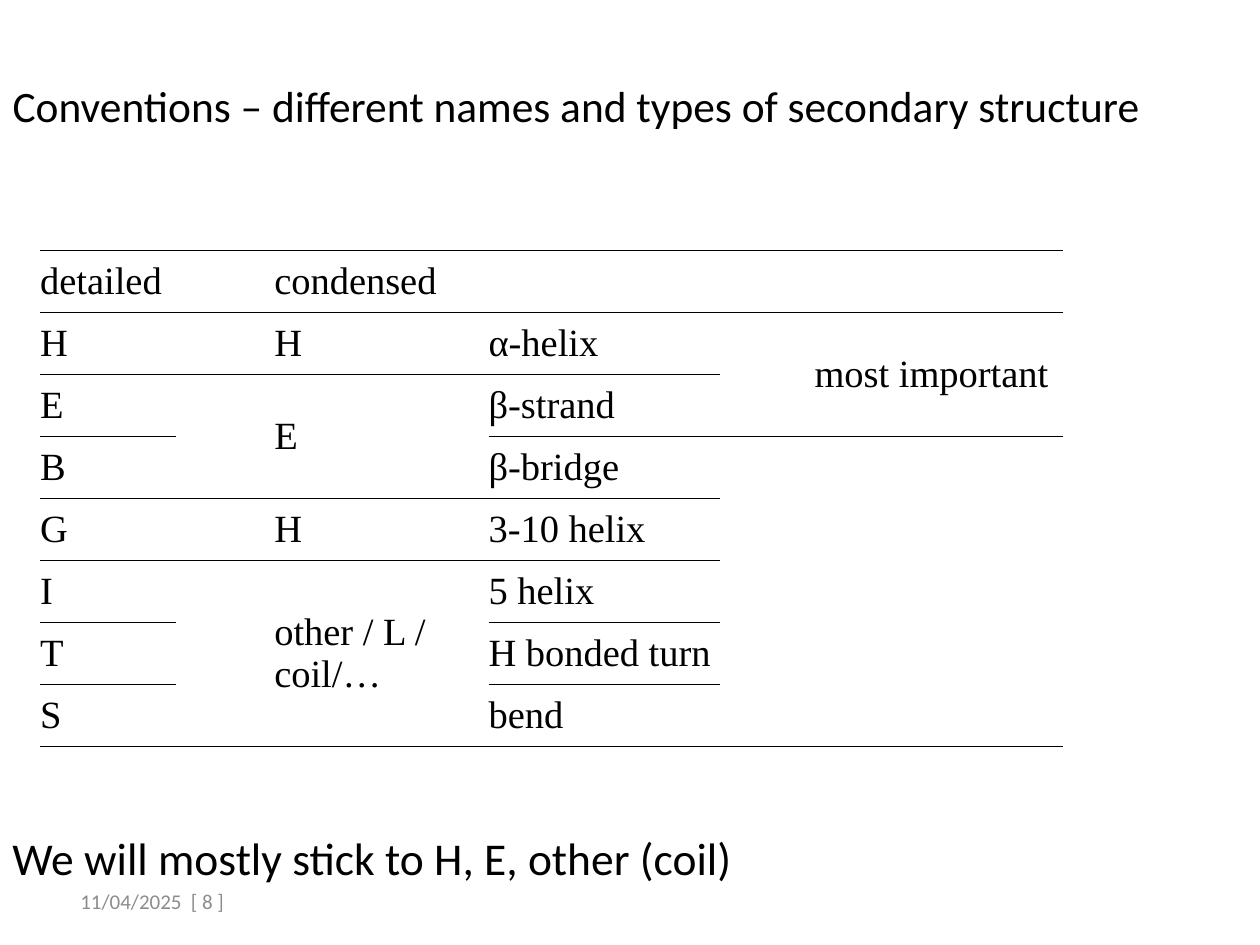
import dataclasses

import pptx
import pptx.dml.color
import pptx.enum.text
import pptx.oxml
import pptx.oxml.ns
import pptx.util
from pptx.util import Cm, Pt

MSO_ANCHOR = pptx.enum.text.MSO_ANCHOR


@dataclasses.dataclass(frozen=True)
class Theme:
    ink: str = "000000"
    muted: str = "8C8C8C"
    sans: str = "Calibri"
    serif: str = "Times New Roman"
    title: float = 24.8
    note: float = 26
    cell: float = 22
    footer: float = 12
    rule: float = 1


THEME = Theme()
NO_STYLE = "{2D5ABB26-0587-4C30-8999-92F81FD0307C}"

# Table content
COL_WIDTHS = [2.74, 1.98, 4.32, 4.67, 1.9, 5.01]
ROW_HEIGHT = 1.25
ROWS = [
    ["detailed", "", "condensed", "", "", ""],
    ["H", "", "H", "α-helix", "", "most important"],
    ["E", "", "E", "β-strand", "", ""],
    ["B", "", "", "β-bridge", "", ""],
    ["G", "", "H", "3-10 helix", "", ""],
    ["I", "", "other / L / coil/…", "5 helix", "", ""],
    ["T", "", "", "H bonded turn", "", ""],
    ["S", "", "", "bend", "", ""],
]
# Vertical merges: first row, last row, columns
MERGES = [(1, 2, (4, 5)), (2, 3, (1, 2)), (3, 7, (4, 5)), (5, 7, (1, 2))]
# Columns ruled at each horizontal grid line, from top to bottom
ALL = range(6)
RULES = [ALL, ALL, range(4), (0, 3, 4, 5), range(4), range(4), (0, 3), (0, 3), ALL]


def set_text(tf, text, size, font, color=THEME.ink, before=0.0):
    tf.text = text
    p = tf.paragraphs[0]
    p.alignment = pptx.enum.text.PP_ALIGN.LEFT
    p.space_before = Pt(before)
    p.font.size = Pt(size)
    p.font.name = font
    p.font.color.rgb = pptx.dml.color.RGBColor.from_string(color)


def place_title(s, text, left, top, width, height):
    sp = s.shapes.title
    sp.left, sp.top, sp.width, sp.height = Cm(left), Cm(top), Cm(width), Cm(height)
    tf = sp.text_frame
    tf.auto_size = pptx.enum.text.MSO_AUTO_SIZE.NONE
    tf.vertical_anchor = MSO_ANCHOR.TOP
    set_text(tf, text, THEME.title, THEME.sans, before=2.5)


def add_text(s, text, left, top, width, height, size, anchor=MSO_ANCHOR.TOP, **style):
    sp = s.shapes.add_textbox(Cm(left), Cm(top), Cm(width), Cm(height))
    tf = sp.text_frame
    tf.word_wrap = True
    tf.vertical_anchor = anchor
    set_text(tf, text, size, THEME.sans, **style)
    return tf


def add_border(cell, side):
    tc_pr = cell._tc.get_or_add_tcPr()
    tc_pr.append(pptx.oxml.parse_xml(
        f'<a:{side} {pptx.oxml.ns.nsdecls("a")} w="{Pt(THEME.rule)}">'
        f'<a:solidFill><a:srgbClr val="{THEME.ink}"/></a:solidFill></a:{side}>'))


def format_cell(cell, row, col, text):
    cell.margin_left = cell.margin_right = cell.margin_top = cell.margin_bottom = 0
    cell.vertical_anchor = MSO_ANCHOR.MIDDLE
    if text:
        set_text(cell.text_frame, text, THEME.cell, THEME.serif, before=2)
    # A merged cell takes its lower rule from the last row it covers
    last = row + (cell.span_height if cell.is_merge_origin else 1)
    for side, line in (("lnT", row), ("lnB", last)):
        if col in RULES[line]:
            add_border(cell, side)
    cell.fill.background()


def add_structure_table(s, left, top):
    frame = s.shapes.add_table(len(ROWS), len(COL_WIDTHS), Cm(left), Cm(top),
                               Cm(sum(COL_WIDTHS)), Cm(ROW_HEIGHT * len(ROWS)))
    table = frame.table
    table.first_row = table.horz_banding = False
    table._tbl.tblPr.find(pptx.oxml.ns.qn("a:tableStyleId")).text = NO_STYLE
    for column, width in zip(table.columns, COL_WIDTHS):
        column.width = Cm(width)
    for row in table.rows:
        row.height = Cm(ROW_HEIGHT)
    for first, last, cols in MERGES:
        for col in cols:
            table.cell(first, col).merge(table.cell(last, col))
    for i, row in enumerate(ROWS):
        for j, text in enumerate(row):
            format_cell(table.cell(i, j), i, j, text)


def main():
    prs = pptx.Presentation()
    prs.slide_width, prs.slide_height = Cm(25.4), Cm(19.05)
    s = prs.slides.add_slide(prs.slide_layouts[5])

    # Title and table
    place_title(s, "Conventions – different names and types of secondary structure",
                0, 1.47, 25.07, 1.35)
    add_structure_table(s, 0.81, 5.05)

    # Closing note and footer
    add_text(s, "We will mostly stick to H, E, other (coil)",
             0, 16.61, 25.07, 1.35, THEME.note, before=2.5)
    tf = add_text(s, "11/04/2025  [ 8 ]", 1.27, 17.65, 5.92, 1.02, THEME.footer,
                  anchor=MSO_ANCHOR.MIDDLE, color=THEME.muted)
    tf.margin_left = Cm(0.35)

    prs.save("out.pptx")


main()
